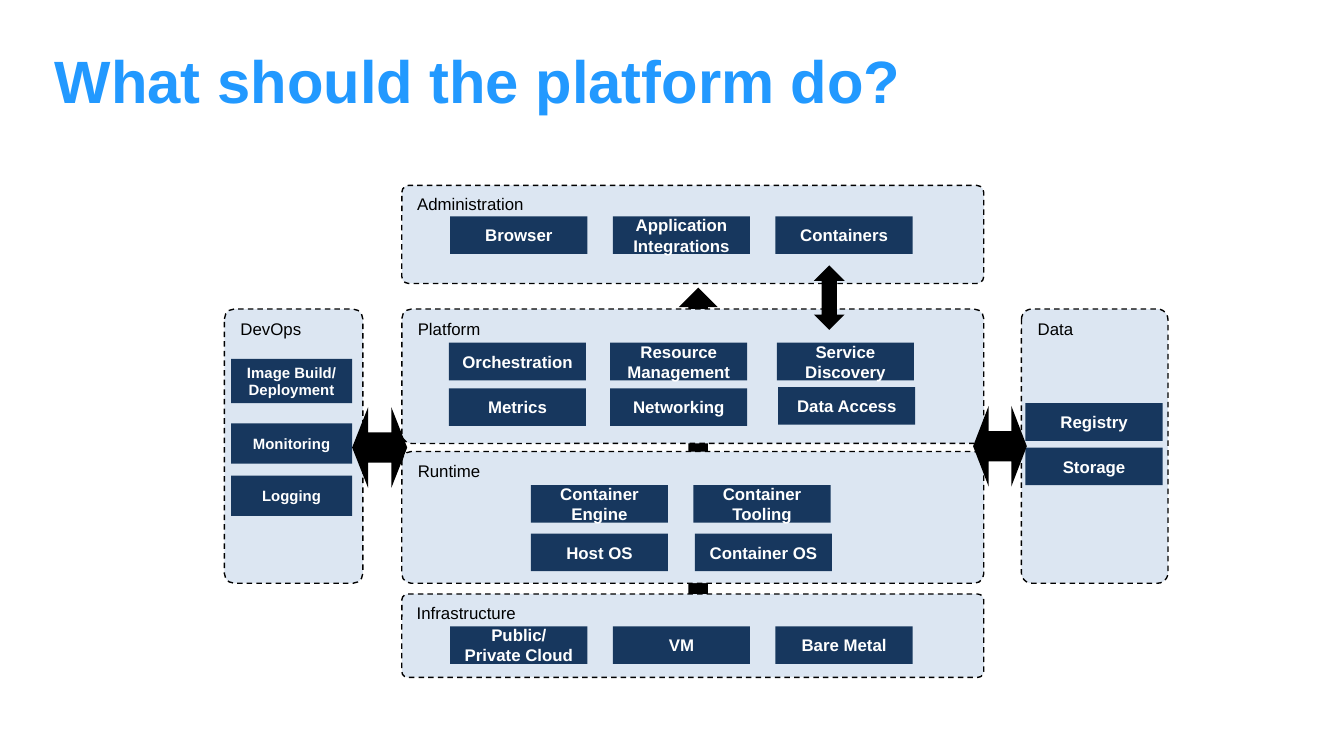
"""Build a slide that maps the layers and services of a container platform."""
from pptx import Presentation
from pptx.dml.color import RGBColor
from pptx.enum import dml, shapes, text
from pptx.util import Inches, Pt

SKY = RGBColor(0x22, 0x99, 0xFF)
PALE = RGBColor(0xDC, 0xE6, 0xF2)
NAVY = RGBColor(0x17, 0x37, 0x5E)
BLACK = RGBColor(0, 0, 0)
WHITE = RGBColor(0xFF, 0xFF, 0xFF)
SHAPE = shapes.MSO_SHAPE

prs = Presentation()
prs.slide_width = Inches(10)
prs.slide_height = Inches(10 * 9 / 16)
slide = prs.slides.add_slide(prs.slide_layouts[6])


def add_block(kind, place, fill, adjustments=()):
    block = slide.shapes.add_shape(kind, *map(Inches, place))
    block.shadow.inherit = False
    block.fill.solid()
    block.fill.fore_color.rgb = fill
    block.line.fill.background()
    for index, value in enumerate(adjustments):
        block.adjustments[index] = value
    return block


def write(block, words, size, color, bold, align, anchor):
    frame = block.text_frame
    frame.word_wrap = True
    frame.vertical_anchor = anchor
    paragraph = frame.paragraphs[0]
    paragraph.alignment = align
    run = paragraph.add_run()
    run.text = words
    run.font.name = "Arial"
    run.font.size = Pt(size)
    run.font.bold = bold
    run.font.color.rgb = color


LEFT, CENTER = text.PP_ALIGN.LEFT, text.PP_ALIGN.CENTER
TOP, MIDDLE = text.MSO_ANCHOR.TOP, text.MSO_ANCHOR.MIDDLE

title = slide.shapes.add_textbox(Inches(0.31), Inches(0.28), Inches(8.62), Inches(0.63))
write(title, "What should the platform do?", 32, SKY, True, LEFT, MIDDLE)

add_block(SHAPE.UP_ARROW, (5.05, 2.14, 0.29, 2.7), BLACK)

areas = [
    ("Infrastructure", (2.99, 4.42, 4.33, 0.62)),
    ("Runtime", (2.99, 3.36, 4.33, 0.98)),
    ("Platform", (2.99, 2.3, 4.33, 1)),
    ("Administration", (2.99, 1.38, 4.33, 0.73)),
    ("Data", (7.6, 2.3, 1.09, 2.04)),
    ("DevOps", (1.67, 2.3, 1.03, 2.04)),
]
for name, place in areas:
    area = add_block(SHAPE.ROUNDED_RECTANGLE, place, PALE, [0.071])
    area.line.color.rgb = BLACK
    area.line.width = Pt(0.75)
    area.line.dash_style = dml.MSO_LINE.DASH
    write(area, name, 9, BLACK, False, LEFT, TOP)

service_rows = [
    (1.61, [(3.35, "Browser"), (4.56, "Application Integrations"), (5.77, "Containers")]),
    (2.55, [(3.34, "Orchestration"), (4.54, "Resource Management"), (5.78, "Service Discovery")]),
    (2.88, [(5.79, "Data Access")]),
    (2.89, [(3.34, "Metrics"), (4.54, "Networking")]),
    (3.61, [(3.95, "Container Engine"), (5.16, "Container Tooling")]),
    (3.97, [(3.95, "Host OS"), (5.17, "Container OS")]),
    (4.66, [(3.35, "Public/Private Cloud"), (4.56, "VM"), (5.77, "Bare Metal")]),
    (3, [(7.63, "Registry")]),
    (3.33, [(7.63, "Storage")]),
]
for top, services in service_rows:
    for left, name in services:
        service = add_block(SHAPE.RECTANGLE, (left, top, 1.02, 0.28), NAVY)
        write(service, name, 9, WHITE, True, CENTER, MIDDLE)

devops_steps = [
    (2.67, 0.33, "Image Build/ Deployment"),
    (3.15, 0.3, "Monitoring"),
    (3.54, 0.3, "Logging"),
]
for top, height, name in devops_steps:
    step = add_block(SHAPE.RECTANGLE, (1.72, top, 0.9, height), NAVY)
    write(step, name, 8, WHITE, True, CENTER, MIDDLE)

for place in [(2.62, 3.03, 0.41, 0.6), (7.24, 3.02, 0.4, 0.6)]:
    arrow = add_block(SHAPE.LEFT_RIGHT_ARROW, place, BLACK, [0.373, 0.289])
    arrow.rotation = 180
admin_link = add_block(SHAPE.LEFT_RIGHT_ARROW, (5.93, 2.1, 0.48, 0.23), BLACK)
admin_link.rotation = 90

prs.save("out.pptx")
